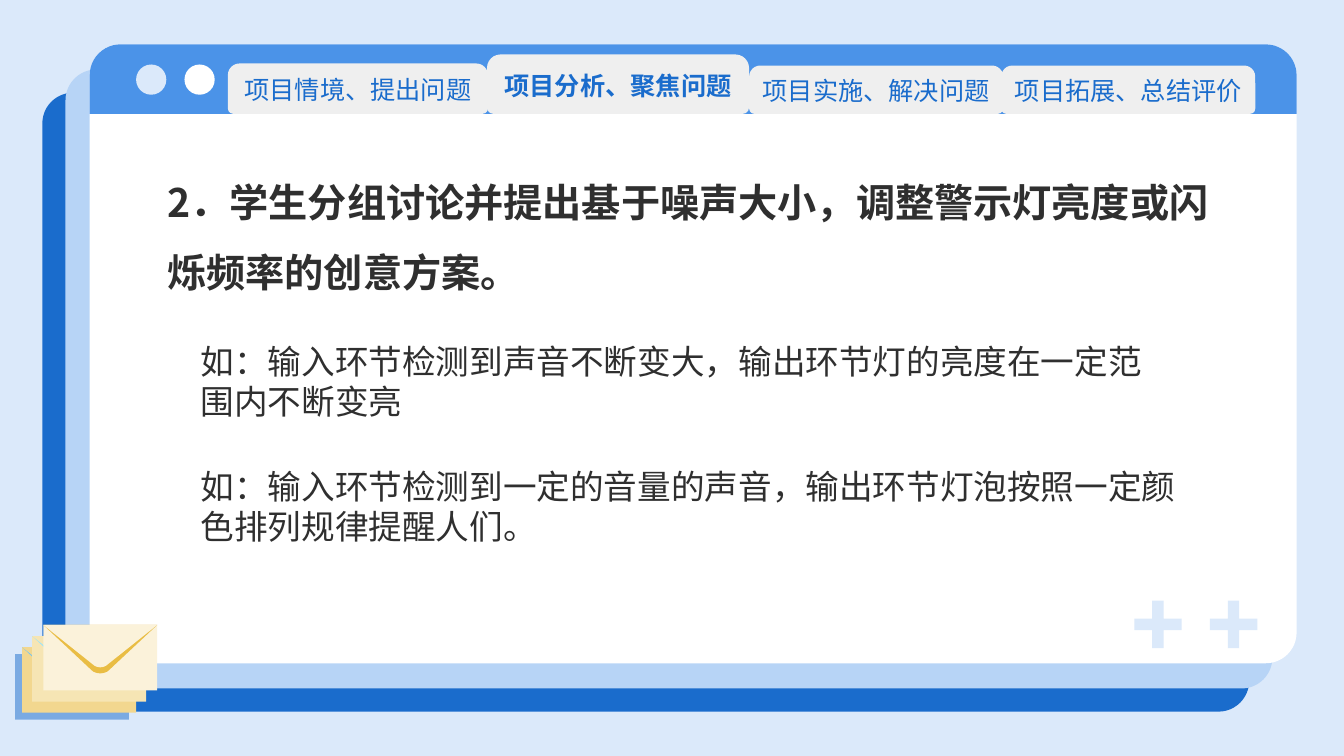
from lxml.etree import SubElement
from pptx import Presentation
from pptx.dml.color import RGBColor
from pptx.enum.shapes import MSO_SHAPE
from pptx.enum.text import MSO_ANCHOR, MSO_AUTO_SIZE, PP_ALIGN
from pptx.oxml.ns import qn
from pptx.util import Inches, Pt

C = {
    "sky": "DBE9FA", "blue": "1A6CCC", "light": "B7D4F6", "bar": "4B93E8",
    "white": "FFFFFF", "tab": "EFEFEF", "ink": "2F2F2F",
}
CJK = "Noto Sans CJK SC"

# Content
HEADING = "2．学生分组讨论并提出基于噪声大小，调整警示灯亮度或闪烁频率的创意方案。"
EXAMPLES = [  # text, top, width
    ("如：输入环节检测到声音不断变大，输出环节灯的亮度在一定范围内不断变亮", 3.33, 9.81),
    ("如：输入环节检测到一定的音量的声音，输出环节灯泡按照一定颜色排列规律提醒人们。", 4.57, 10.04),
]
TABS = [  # text, left, top, width, current
    ("项目情境、提出问题", 2.26, 0.63, 2.58, False),
    ("项目分析、聚焦问题", 4.83, 0.54, 2.60, True),
    ("项目实施、解决问题", 7.43, 0.65, 2.52, False),
    ("项目拓展、总结评价", 9.93, 0.65, 2.52, False),
]
TAB_BOTTOM = 1.13
PANELS = [("blue", 0.42, 0.92), ("light", 0.65, 0.69), ("white", 0.89, 0.44)]
PANEL_W, PANEL_H, BAR_H, RADIUS = 11.97, 6.14, 0.69, 0.305
ENVELOPES = [  # left, top, paper, fold edge
    (0.22, 6.42, "F2D78F", "6BC5FF"),
    (0.32, 6.31, "F6E5B4", "96E4FF"),
    (0.43, 6.20, "FBF2DA", "E9BD44"),
]
ENV_W, ENV_H = 1.13, 0.65

prs = Presentation()
prs.slide_width, prs.slide_height = Inches(13.33), Inches(7.5)
s = prs.slides.add_slide(prs.slide_layouts[3])
s.background.fill.solid()
s.background.fill.fore_color.rgb = RGBColor.from_string(C["sky"])


def paint(sp, color):
    sp.shadow.inherit = False
    sp.fill.solid()
    sp.fill.fore_color.rgb = RGBColor.from_string(color)
    sp.line.fill.background()
    return sp


def shape(kind, x, y, w, h, color, *adj):
    sp = s.shapes.add_shape(kind, Inches(x), Inches(y), Inches(w), Inches(h))
    for i, value in enumerate(adj):
        sp.adjustments[i] = value
    return paint(sp, color)


def style(p, text, size, color, bold=False, font="Arial"):
    p.text = text
    r = p.runs[0]
    r.font.size, r.font.bold, r.font.name = Pt(size), bold, font
    r.font.color.rgb = RGBColor.from_string(color)
    SubElement(r.font._element, qn("a:ea")).set("typeface", CJK)


def fold(x, y, shoulder, depth, color):
    """Downward flap whose tip is a Bezier curve starting at the shoulder."""
    left, right = shoulder, ENV_W - shoulder
    xs, ys = (left, left + 0.04, right - 0.04, right), (depth, depth + 0.04, depth + 0.04, depth)
    pts = []
    for i in range(9):
        t = i / 8
        weights = ((1 - t) ** 3, 3 * t * (1 - t) ** 2, 3 * t * t * (1 - t), t ** 3)
        pts.append(tuple(sum(a * b for a, b in zip(weights, axis)) for axis in (xs, ys)))
    pts.append((ENV_W, 0))
    fb = s.shapes.build_freeform(Inches(x), Inches(y))
    fb.add_line_segments([(Inches(x + a), Inches(y + b)) for a, b in pts])
    paint(fb.convert_to_shape(), color)


# Stacked window panels and title bar
for name, x, y in PANELS:
    shape(MSO_SHAPE.ROUNDED_RECTANGLE, x, y, PANEL_W, PANEL_H, C[name], RADIUS / PANEL_H)
shape(MSO_SHAPE.ROUND_2_SAME_RECTANGLE, x, y, PANEL_W, BAR_H, C["bar"], RADIUS / BAR_H, 0)

# Window buttons and plus signs
for i, name in enumerate(("sky", "white", "sky")):
    shape(MSO_SHAPE.OVAL, 1.35 + 0.48 * i, 0.64, 0.3, 0.3, C[name])
for x in (11.25, 12.0):
    shape(MSO_SHAPE.CROSS, x, 5.96, 0.47, 0.47, C["sky"], 0.38)

# Envelopes over a translucent shade
shade = shape(MSO_SHAPE.RECTANGLE, 0.15, 6.49, ENV_W, ENV_H, C["blue"])
rgb = shade._element.spPr.find(qn("a:solidFill")).find(qn("a:srgbClr"))
SubElement(rgb, qn("a:alpha")).set("val", "50000")
for x, y, paper, edge in ENVELOPES:
    shape(MSO_SHAPE.RECTANGLE, x, y, ENV_W, ENV_H, paper)
    fold(x, y, 0.48, 0.45, edge)
    fold(x, y, 0.49, 0.39, paper)

# Heading and examples in the placeholders, brought above the panels
title, *bodies = s.placeholders
blocks = [(title, HEADING, 1.56, 1.49, 10.88, 1.51, 28, 50, True, CJK)]
blocks += [(ph, text, 1.89, y, w, 0.91, 24, 28.6, False, "Arial")
           for ph, (text, y, w) in zip(bodies, EXAMPLES)]
for ph, text, x, y, w, h, size, leading, bold, font in blocks:
    s.shapes._spTree.append(ph._element)
    ph.left, ph.top, ph.width, ph.height = (Inches(v) for v in (x, y, w, h))
    tf = ph.text_frame
    tf.word_wrap, tf.auto_size = True, MSO_AUTO_SIZE.NONE
    tf.vertical_anchor = MSO_ANCHOR.TOP
    p = tf.paragraphs[0]
    style(p, text, size, C["ink"], bold, font)
    p.alignment, p.space_before, p.line_spacing = PP_ALIGN.LEFT, Pt(0), Pt(leading)
    pPr = p._p.get_or_add_pPr()
    pPr.set("marL", "0")
    pPr.set("indent", "0")
    SubElement(pPr, qn("a:buNone"))

# Navigation tabs
for text, x, y, w, current in TABS:
    tab = shape(MSO_SHAPE.ROUND_2_SAME_RECTANGLE, x, y, w, TAB_BOTTOM - y, C["tab"], 0.23, 0.11)
    tf = tab.text_frame
    tf.word_wrap, tf.vertical_anchor = False, MSO_ANCHOR.MIDDLE
    p = tf.paragraphs[0]
    p.alignment = PP_ALIGN.CENTER
    style(p, text, 18, C["blue"], current)

prs.save("out.pptx")
